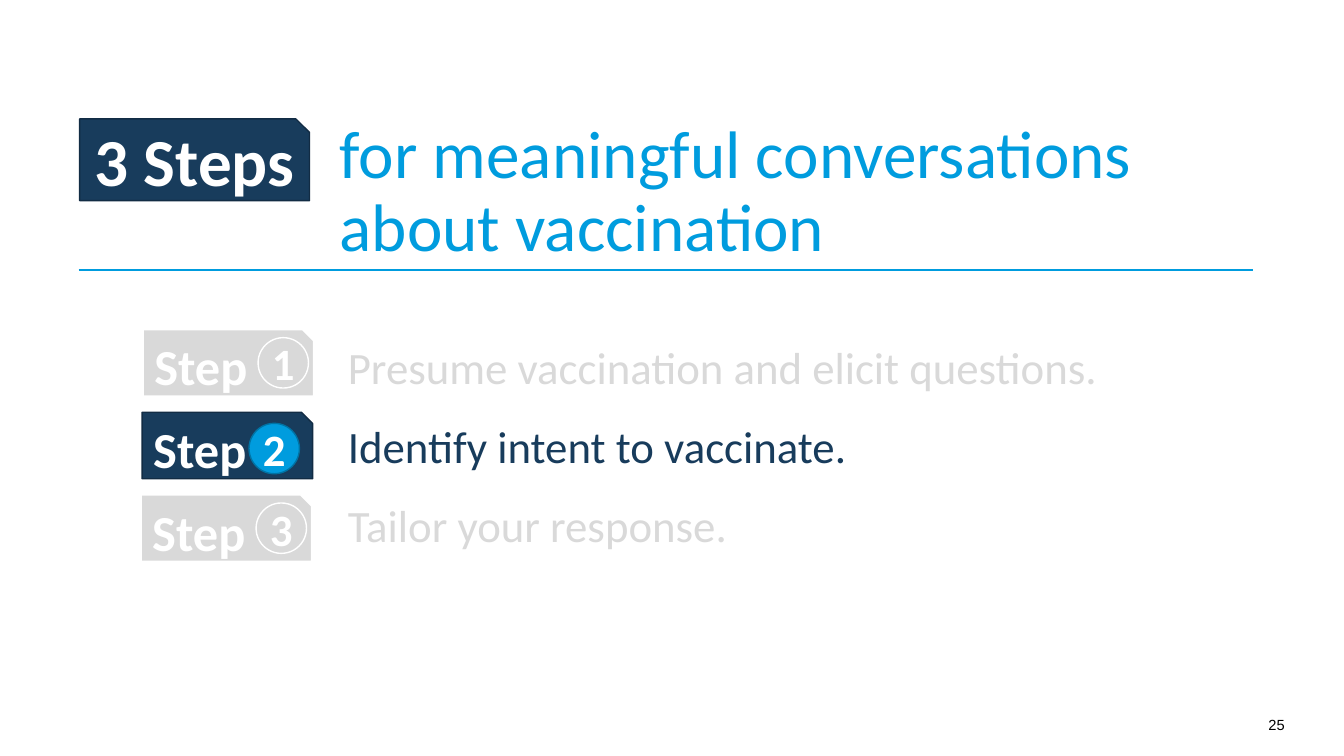
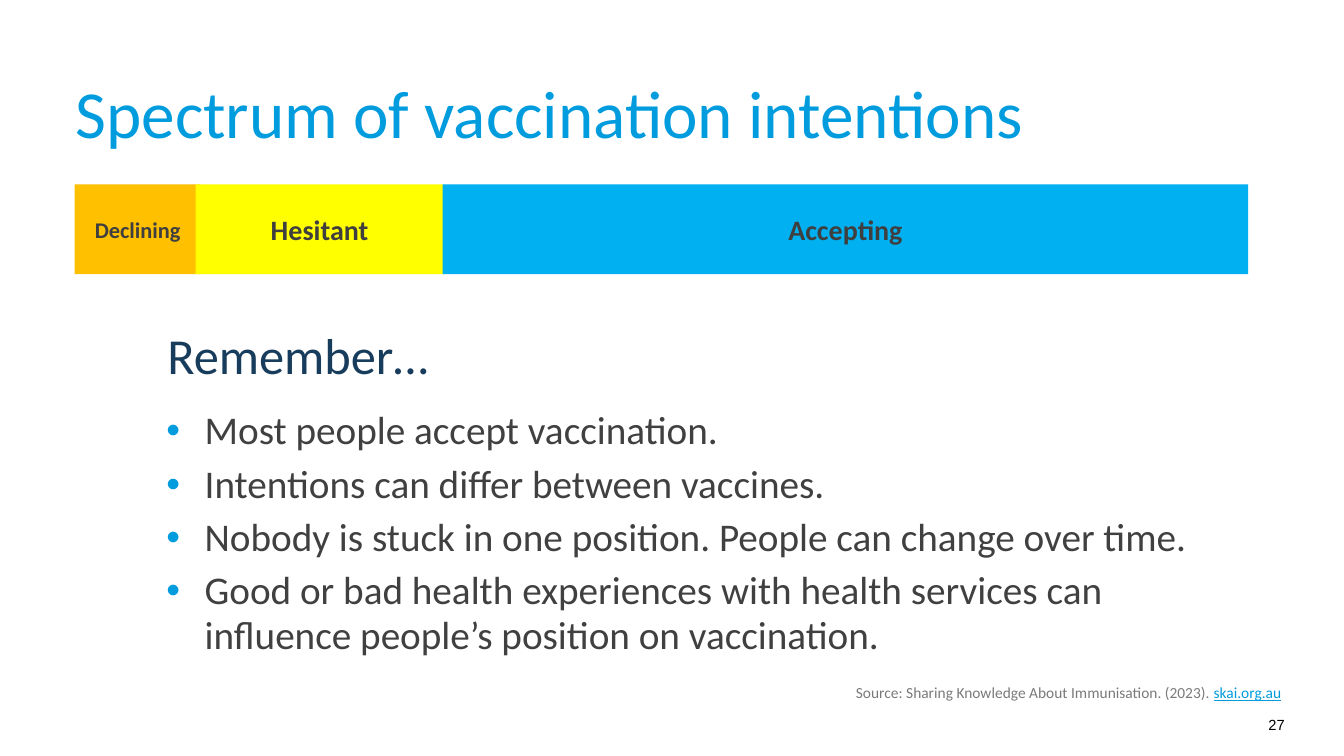
from dataclasses import dataclass

from lxml.etree import SubElement
from pptx import Presentation
from pptx.dml.color import RGBColor as Rgb
from pptx.enum.shapes import MSO_CONNECTOR as Link, MSO_SHAPE as Kind
from pptx.enum.text import MSO_ANCHOR as Anchor, MSO_AUTO_SIZE as Fit, PP_ALIGN as Align
from pptx.oxml.ns import qn
from pptx.util import Pt

PX = 9144


@dataclass(frozen=True)
class Theme:
    font: str = "Calibri"
    plain: str = "Arial"
    blue: str = "009CDE"
    navy: str = "183C5C"
    navy_edge: str = "122C44"
    blue_edge: str = "0073A4"
    pale: str = "D9D9D9"
    white: str = "FFFFFF"
    black: str = "000000"
    text: str = "404040"
    label: str = "3F3F3F"
    muted: str = "7A7A7A"
    orange: str = "FFC000"
    yellow: str = "FFFF00"
    sky: str = "00B0F0"
    huge: int = 48
    large: int = 36
    step: int = 32
    list: int = 28
    bar: int = 20
    small: int = 16
    source: int = 11
    page: float = 10.5


T = Theme()
INSET = (10, 5, 10, 5)
HEAD = (2, 0, 39, 0)


def place(shape, box):
    shape.left, shape.top, shape.width, shape.height = [n * PX for n in box]
    return shape


def mark(para, bullet, hang):
    props = para._p.get_or_add_pPr()
    props.set("marL", str(hang * PX))
    props.set("indent", str(-hang * PX))
    if not bullet:
        SubElement(props, qn("a:buNone"))
        return
    tint = SubElement(props, qn("a:buClr"))
    SubElement(tint, qn("a:srgbClr")).set("val", T.blue)
    SubElement(props, qn("a:buFont")).set("typeface", T.plain)
    SubElement(props, qn("a:buChar")).set("char", bullet)


def write(shape, lines, size, color=T.text, font=T.font, bold=False, align=Align.LEFT,
          anchor=Anchor.TOP, inset=INSET, lead=None, after=0, bullet=None, hang=0):
    frame = shape.text_frame
    frame.word_wrap = True
    frame.auto_size = Fit.NONE
    frame.vertical_anchor = anchor
    (frame.margin_left, frame.margin_top,
     frame.margin_right, frame.margin_bottom) = [n * PX for n in inset]
    for i, line in enumerate(lines):
        para = frame.add_paragraph() if i else frame.paragraphs[0]
        mark(para, bullet, hang)
        para.alignment = align
        para.space_before = Pt(0)
        para.space_after = Pt(after)
        if lead:
            para.line_spacing = lead
        for words, tint, under in [(line, color, False)] if isinstance(line, str) else line:
            run = para.add_run()
            run.text = words
            run.font.name, run.font.size, run.font.bold = font, Pt(size), bold
            run.font.color.rgb = Rgb.from_string(tint)
            if under:
                run.font.underline = True


def note(slide, box, lines, size, **form):
    write(slide.shapes.add_textbox(*[n * PX for n in box]), lines, size, **form)


def block(slide, kind, box, fill, edge=None):
    shape = slide.shapes.add_shape(kind, *[n * PX for n in box])
    shape.shadow.inherit = False
    shape.fill.solid()
    shape.fill.fore_color.rgb = Rgb.from_string(fill)
    if edge:
        shape.line.color.rgb = Rgb.from_string(edge)
        shape.line.width = Pt(1)
    else:
        shape.line.fill.background()
    return shape


def rule(slide, x, y, wide):
    line = slide.shapes.add_connector(Link.STRAIGHT, x * PX, y * PX, (x + wide) * PX, y * PX)
    line.line.color.rgb = Rgb.from_string(T.blue)
    line.line.width = Pt(1.5)
    SubElement(line._element.spPr, qn("a:effectLst"))


def start(deck, page, box, lines):
    slide = deck.slides.add_slide(deck.slide_layouts[1])
    write(place(slide.shapes.title, box), lines, T.huge, color=T.blue,
          anchor=Anchor.BOTTOM, inset=HEAD, lead=0.9)
    note(slide, (1195, 705, 89, 29), [page], T.page, color=T.black,
         font=T.plain, align=Align.RIGHT)
    return slide


def badge(slide, box, words, size, fill, edge, inset):
    write(block(slide, Kind.SNIP_1_RECTANGLE, box, fill, edge), [words], size,
          color=T.white, bold=True, anchor=Anchor.MIDDLE, inset=inset)


def step(slide, box, digit, live):
    x, y = box[:2]
    fill, edge = (T.navy, T.navy_edge) if live else (T.pale, T.white)
    badge(slide, box, "Step", T.large, fill, edge, (11, 0, 0, 0))
    dx, dy = (106, 11) if live else (114, 8)
    fill, edge = (T.blue, T.blue_edge) if live else (T.pale, T.white)
    disc = block(slide, Kind.OVAL, (x + dx, y + dy, 50, 50), fill, edge)
    write(disc, [digit], T.step, color=T.white, bold=True, align=Align.CENTER,
          anchor=Anchor.MIDDLE, inset=(0, 0, 0, 0))


def steps(slide, box, names, live):
    x, y, wide, high = box
    lines = [[(name, T.navy if i == live else T.pale, False)] for i, name in enumerate(names)]
    write(place(slide.placeholders[1], (x + 193, y + 5, 858, 222)), lines, T.step, after=18)
    for i in range(len(names)):
        step(slide, (x - i, y + 82 * i, wide, high), str(i + 1), i == live)


def bars(slide, box, parts):
    x, y, high = box
    for dx, wide, name, fill, size in parts:
        bar = block(slide, Kind.RECTANGLE, (x + dx, y, wide, high), fill)
        write(bar, [name], size, color=T.label, bold=True, align=Align.CENTER,
              anchor=Anchor.MIDDLE)


def recap(slide, box, head, points):
    x, y, wide, high = box
    note(slide, (x + 9, y, wide - 9, 73), [head], T.large, color=T.navy,
         inset=HEAD, lead=0.9)
    write(place(slide.placeholders[1], (x, y + 73, wide, high - 73)), points, T.list,
          lead=0.95, after=6, bullet="•", hang=38)


def agenda(deck):
    slide = start(deck, "25", (335, 174, 924, 90),
                  ["for meaningful conversations", "about vaccination"])
    rule(slide, 78, 268, 1165)
    badge(slide, (79, 118, 228, 81), "3 Steps", T.huge, T.navy, T.navy_edge, (15, 0, 0, 6))
    steps(slide, (142, 327, 169, 66), [
        "Presume vaccination and elicit questions.",
        "Identify intent to vaccinate.",
        "Tailor your response.",
    ], live=1)


def range_page(deck):
    slide = start(deck, "27", (73, 92, 1123, 60), ["Spectrum of vaccination intentions"])
    bars(slide, (74, 183, 89), [
        (0, 125, "Declining", T.orange, T.small),
        (120, 246, "Hesitant", T.yellow, T.bar),
        (365, 799, "Accepting", T.sky, T.bar),
    ])
    recap(slide, (155, 328, 1081, 332), "Remember…", [
        "Most people accept vaccination.",
        "Intentions can differ between vaccines.",
        "Nobody is stuck in one position. People can change over time.",
        "Good or bad health experiences with health services can influence "
        "people’s position on vaccination.",
    ])
    note(slide, (839, 673, 468, 29), [[
        ("Source: Sharing Knowledge About Immunisation. (2023). ", T.muted, False),
        ("skai.org.au", T.blue, True),
    ]], T.source)


def main():
    deck = Presentation()
    deck.slide_width, deck.slide_height = 1333 * PX, 750 * PX
    agenda(deck)
    range_page(deck)
    deck.save("out.pptx")


if __name__ == "__main__":
    main()
